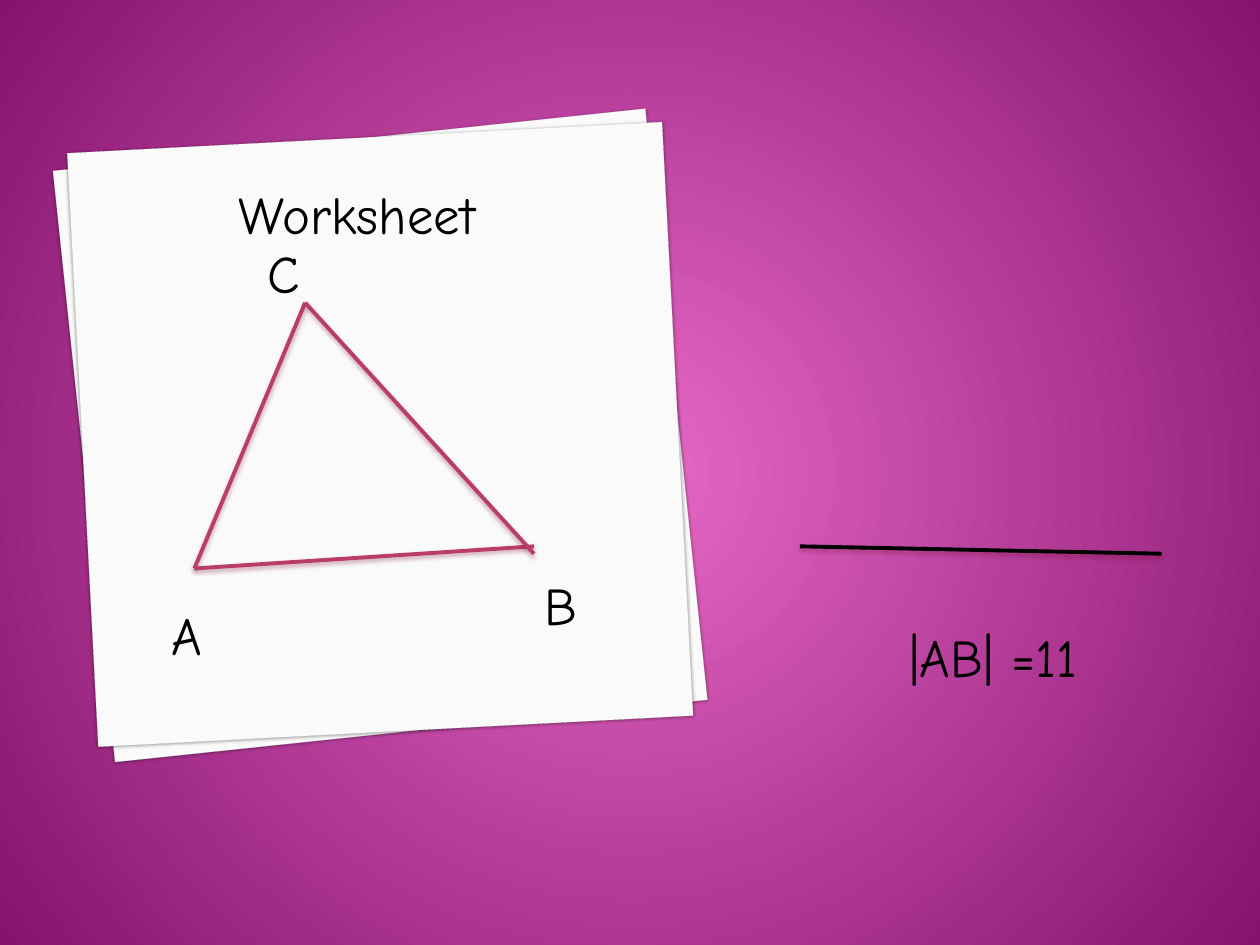
"""Build a worksheet slide with triangle ABC and the length of its side AB."""
import pptx
import pptx.dml.color
import pptx.enum.shapes
import pptx.enum.text
import pptx.oxml
import pptx.oxml.ns
import pptx.util

Pt = pptx.util.Pt
RGBColor = pptx.dml.color.RGBColor
PINK = RGBColor(0xE8, 0x69, 0xC7)
PURPLE = RGBColor(0x84, 0x14, 0x6D)
PAPER = RGBColor(0xFA, 0xFA, 0xFA)
PAPER_EDGE = RGBColor(0xEA, 0xEA, 0xEA)
CRIMSON = RGBColor(0xB8, 0x3D, 0x68)
LINE_SHADOW = RGBColor(0x7F, 0x12, 0x38)
BLACK = RGBColor(0, 0, 0)
NAMESPACE = pptx.oxml.ns.nsdecls("a")


def add_shadow(shape, color, opacity, blur, distance):
    """Give the shape a soft shadow that falls straight down."""
    shape.element.spPr.append(pptx.oxml.parse_xml(
        f'<a:effectLst {NAMESPACE}><a:outerShdw blurRad="{Pt(blur)}" '
        f'dist="{Pt(distance)}" dir="5400000" rotWithShape="0">'
        f'<a:srgbClr val="{color}"><a:alpha val="{opacity * 1000}"/></a:srgbClr>'
        '</a:outerShdw></a:effectLst>'))


deck = pptx.Presentation()
deck.slide_width = Pt(1024)
deck.slide_height = Pt(768)
slide = deck.slides.add_slide(deck.slide_layouts[6])

background = slide.background.fill
background.gradient()
for stop, color in zip(background.gradient_stops, (PINK, PURPLE)):
    stop.color.rgb = color
linear = slide.element.xpath(".//a:gradFill/a:lin")[0]
linear.getparent().replace(linear, pptx.oxml.parse_xml(
    f'<a:path {NAMESPACE} path="circle">'
    '<a:fillToRect l="50000" t="50000" r="50000" b="50000"/></a:path>'))

for rotation, top in ((354, 112.3), (357, 111.6)):
    sheet = slide.shapes.add_shape(
        pptx.enum.shapes.MSO_SHAPE.RECTANGLE, Pt(67), Pt(top), Pt(484), Pt(483))
    sheet.rotation = rotation
    sheet.fill.solid()
    sheet.fill.fore_color.rgb = PAPER
    sheet.line.color.rgb = PAPER_EDGE
    sheet.line.width = Pt(0.1)
    add_shadow(sheet, BLACK, 40, 2, 1)

segments = (
    ((248, 246), (158, 462), CRIMSON),
    ((434, 444), (158, 462), CRIMSON),
    ((434, 450), (248, 246), CRIMSON),
    ((650, 444), (944, 450), BLACK),
)
for start, end, color in segments:
    segment = slide.shapes.add_connector(
        pptx.enum.shapes.MSO_CONNECTOR.STRAIGHT, *map(Pt, start + end))
    segment.line.color.rgb = color
    segment.line.width = Pt(3.15)
    add_shadow(segment, LINE_SHADOW, 38, 4, 2)

labels = (
    ("Worksheet", 122, 144, 336, True),
    ("|AB| =11", 704, 504, 207, False),
    ("C", 206, 192, 50, False),
    ("A", 128, 486, 47, False),
    ("B", 434, 462, 43, False),
)
for text, left, top, width, wraps in labels:
    box = slide.shapes.add_textbox(Pt(left), Pt(top), Pt(width), Pt(59))
    frame = box.text_frame
    frame.word_wrap = wraps
    frame.auto_size = pptx.enum.text.MSO_AUTO_SIZE.SHAPE_TO_FIT_TEXT
    frame.vertical_anchor = pptx.enum.text.MSO_ANCHOR.MIDDLE
    para = frame.paragraphs[0]
    para.text = text
    para.alignment = pptx.enum.text.PP_ALIGN.CENTER
    para.font.name = "Comic Neue"
    para.font.size = Pt(43)
    para.font.color.rgb = BLACK

deck.save("out.pptx")
